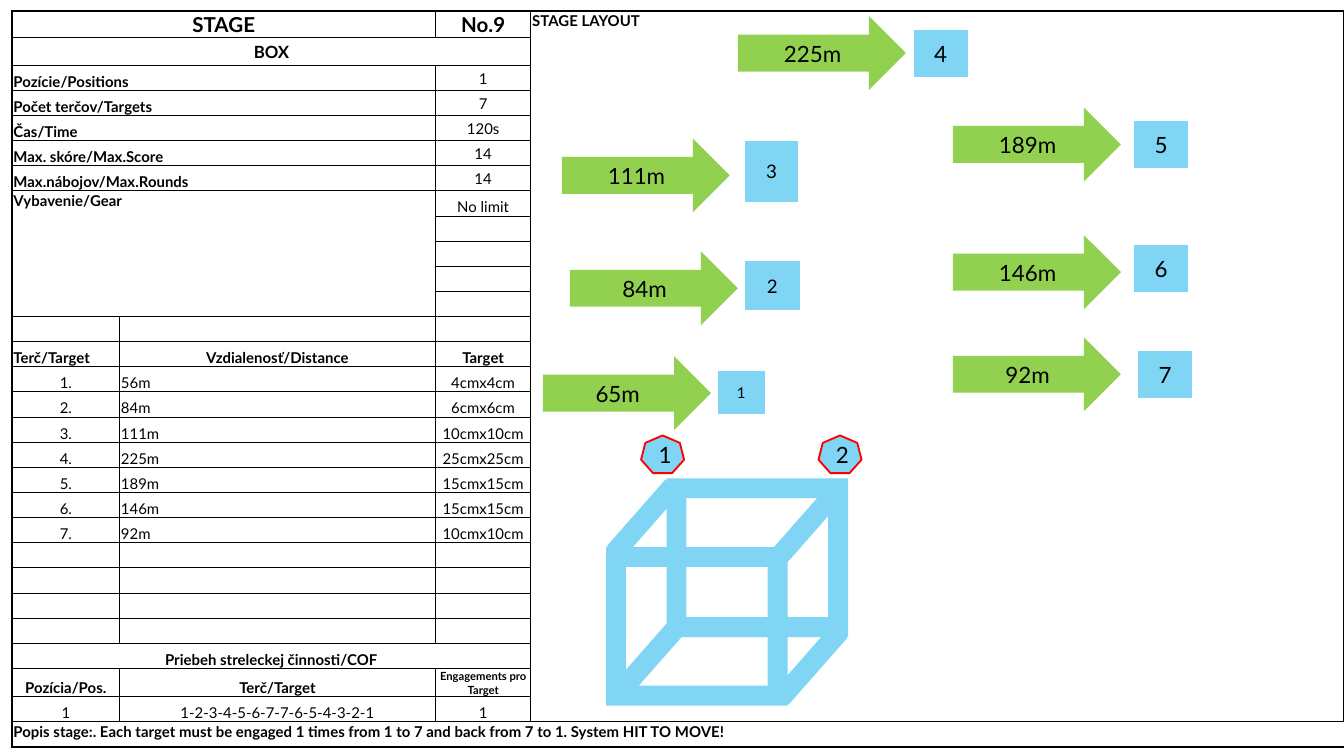
from dataclasses import dataclass
from typing import Optional

from lxml.etree import SubElement
from pptx import Presentation
from pptx.dml.color import RGBColor
from pptx.enum.shapes import MSO_SHAPE
from pptx.enum.text import MSO_ANCHOR, PP_ALIGN
from pptx.oxml.ns import qn
from pptx.util import Inches, Pt

BLACK = RGBColor(0x00, 0x00, 0x00)
BLUE = RGBColor(0x7F, 0xD5, 0xF3)
GREEN = RGBColor(0x92, 0xD0, 0x50)
RED = RGBColor(0xFF, 0x00, 0x00)
FONT = "Lato"
NO_STYLE = "{2D5ABB26-0587-4C30-8999-92F81FD0307C}"

LEFT, CENTER = PP_ALIGN.LEFT, PP_ALIGN.CENTER
TOP, MIDDLE, BOTTOM = MSO_ANCHOR.TOP, MSO_ANCHOR.MIDDLE, MSO_ANCHOR.BOTTOM

SLIDE_WIDTH = 10
SLIDE_HEIGHT = SLIDE_WIDTH * 9 / 16
TABLE_HEIGHT = 5.48
COLUMN_WIDTHS = [0.8, 2.35, 0.71, 6.05]
ROW_COUNT = 29
SPECIAL_ROWS = {0: 0.19, 1: 0.21, 26: 0.21}
ROW_HEIGHT = (TABLE_HEIGHT - sum(SPECIAL_ROWS.values())) / (ROW_COUNT - len(SPECIAL_ROWS))


@dataclass
class Block:
    row: int
    col: int
    text: str = ""
    rows: int = 1
    cols: int = 1
    size: float = 8
    bold: bool = False
    align: PP_ALIGN = CENTER
    anchor: MSO_ANCHOR = BOTTOM


@dataclass
class Item:
    kind: MSO_SHAPE
    left: float
    top: float
    width: float
    height: float
    text: str = ""
    size: float = 12
    fill: RGBColor = BLUE
    line: Optional[RGBColor] = None
    rotation: float = 0


def arrow(left: float, top: float, text: str) -> Item:
    return Item(MSO_SHAPE.RIGHT_ARROW, left, top, 1.25, 0.55, text, fill=GREEN)


def target(left: float, top: float, text: str, width: float = 0.4,
           height: float = 0.35, size: float = 12) -> Item:
    return Item(MSO_SHAPE.FLOWCHART_PROCESS, left, top, width, height, text, size)


def position(left: float, text: str) -> Item:
    return Item(MSO_SHAPE.HEPTAGON, left, 3.24, 0.32, 0.28, text, line=RED)


def box_face(left: float, top: float) -> Item:
    return Item(MSO_SHAPE.FRAME, left, top, 1.35, 1.18)


def box_edge(left: float, top: float) -> Item:
    return Item(MSO_SHAPE.FLOWCHART_PROCESS, left, top, 0.66, 0.15, rotation=311.3)


PARAMETERS = [
    ("Pozície/Positions", "1"),
    ("Počet terčov/Targets", "7"),
    ("Čas/Time", "120s"),
    ("Max. skóre/Max.Score", "14"),
    ("Max.nábojov/Max.Rounds", "14"),
]
TARGETS = [
    ("56m", "4cmx4cm"),
    ("84m", "6cmx6cm"),
    ("111m", "10cmx10cm"),
    ("225m", "25cmx25cm"),
    ("189m", "15cmx15cm"),
    ("146m", "15cmx15cm"),
    ("92m", "10cmx10cm"),
]
ITEMS = [
    position(4.77, "1"),
    target(5.34, 2.76, "1", 0.35, 0.32, 8),
    target(5.54, 1.94, "2", 0.41, 0.37, 10),
    target(5.54, 1.05, "3", 0.4, 0.45, 10),
    target(6.8, 0.22, "4"),
    arrow(4.04, 2.65, "65m"),
    target(8.44, 0.9, "5"),
    arrow(4.24, 1.87, "84m"),
    arrow(4.18, 1.03, "111m"),
    arrow(7.09, 1.75, "146m"),
    arrow(7.09, 0.8, "189m"),
    box_face(4.51, 4.07),
    box_face(4.96, 3.56),
    box_edge(5.7, 4.87),
    box_edge(4.46, 3.79),
    box_edge(4.47, 4.86),
    box_edge(5.64, 3.87),
    arrow(5.49, 0.12, "225m"),
    target(8.44, 1.82, "6"),
    arrow(7.09, 2.51, "92m"),
    target(8.47, 2.61, "7"),
    position(6.09, "2"),
]


def table_blocks() -> list[Block]:
    blocks = [
        Block(0, 0, "STAGE", cols=2, size=11, bold=True),
        Block(0, 2, "No.9", size=11, bold=True, anchor=MIDDLE),
        Block(0, 3, "STAGE LAYOUT", rows=28, bold=True, align=LEFT, anchor=TOP),
        Block(1, 0, "BOX", cols=3, size=9, bold=True, anchor=MIDDLE),
        Block(7, 0, "Vybavenie/Gear", rows=5, cols=2, bold=True, align=LEFT, anchor=TOP),
        Block(7, 2, "No limit"),
        Block(13, 0, "Terč/Target", bold=True, align=LEFT),
        Block(13, 1, "Vzdialenosť/Distance", bold=True),
        Block(13, 2, "Target", bold=True),
        Block(25, 0, "Priebeh streleckej činnosti/COF", cols=3, bold=True),
        Block(26, 0, "Pozícia/Pos.", bold=True),
        Block(26, 1, "Terč/Target", bold=True),
        Block(26, 2, "Engagements pro Target", size=6, bold=True),
        Block(27, 0, "1"),
        Block(27, 1, "1-2-3-4-5-6-7-7-6-5-4-3-2-1"),
        Block(27, 2, "1"),
        Block(28, 0, "Popis stage:. Each target must be engaged 1 times from 1 to 7 "
              "and back from 7 to 1. System HIT TO MOVE!",
              cols=4, bold=True, align=LEFT, anchor=TOP),
    ]
    for row, (label, value) in enumerate(PARAMETERS, 2):
        blocks += [Block(row, 0, label, cols=2, bold=True, align=LEFT),
                   Block(row, 2, value, anchor=MIDDLE)]
    for number, (distance, size) in enumerate(TARGETS, 1):
        row = 13 + number
        blocks += [Block(row, 0, f"{number}."), Block(row, 1, distance, align=LEFT),
                   Block(row, 2, size)]
    blocks += [Block(row, 2) for row in range(8, 12)]
    blocks += [Block(row, col) for row in (12, *range(21, 25)) for col in range(3)]
    return blocks


def format_text(tf, text: str, size: float, bold: bool, align: PP_ALIGN) -> None:
    tf.text = text
    p = tf.paragraphs[0]
    p.alignment = align
    for r in p.runs:
        r.font.name, r.font.size, r.font.bold = FONT, Pt(size), bold
        r.font.color.rgb = BLACK
    if not text:
        SubElement(p._p, qn("a:endParaRPr"), sz=str(int(size * 100)))


def add_border(cell, side: str, width: float) -> None:
    ln = SubElement(cell._tc.get_or_add_tcPr(), qn(f"a:ln{side}"), w=str(Pt(width)))
    SubElement(SubElement(ln, qn("a:solidFill")), qn("a:srgbClr"), val=str(BLACK))


def draw_block(table, block: Block) -> None:
    last_row = block.row + block.rows - 1
    last_col = block.col + block.cols - 1
    for row in range(block.row, last_row + 1):
        for col in range(block.col, last_col + 1):
            cell = table.cell(row, col)
            origin = (row, col) == (block.row, block.col)
            format_text(cell.text_frame, block.text if origin else "",
                        block.size if origin else 8, block.bold, block.align)
            cell.margin_left = cell.margin_right = cell.margin_top = Inches(0.01)
            cell.margin_bottom = 0
            cell.vertical_anchor = block.anchor
            for side, drawn, outer in (
                ("L", col == block.col, col == 0),
                ("R", col == last_col, col == len(COLUMN_WIDTHS) - 1),
                ("T", row == block.row, row == 0),
                ("B", row == last_row, row == ROW_COUNT - 1),
            ):
                if drawn:
                    add_border(cell, side, 1 if outer else 0.5)
            cell.fill.background()
    if block.rows * block.cols > 1:
        table.cell(block.row, block.col).merge(table.cell(last_row, last_col))


def draw_table(s) -> None:
    table = s.shapes.add_table(ROW_COUNT, len(COLUMN_WIDTHS), Inches(0.09), Inches(0.08),
                               Inches(sum(COLUMN_WIDTHS)), Inches(TABLE_HEIGHT)).table
    table.first_row = table.horz_banding = False
    table._tbl.tblPr.find(qn("a:tableStyleId")).text = NO_STYLE
    for column, width in zip(table.columns, COLUMN_WIDTHS):
        column.width = Inches(width)
    for i, row in enumerate(table.rows):
        row.height = Inches(SPECIAL_ROWS.get(i, ROW_HEIGHT))
    for block in table_blocks():
        draw_block(table, block)


def draw_item(s, item: Item) -> None:
    sp = s.shapes.add_shape(item.kind, Inches(item.left), Inches(item.top),
                            Inches(item.width), Inches(item.height))
    sp.shadow.inherit = False
    sp.rotation = item.rotation
    sp.fill.solid()
    sp.fill.fore_color.rgb = item.fill
    if item.line is None:
        sp.line.fill.background()
    else:
        sp.line.color.rgb = item.line
        sp.line.width = Pt(1)
    if item.text:
        tf = sp.text_frame
        tf.margin_left = tf.margin_right = tf.margin_top = tf.margin_bottom = Inches(0.1)
        tf.vertical_anchor = MIDDLE
        format_text(tf, item.text, item.size, False, CENTER)


def main() -> None:
    prs = Presentation()
    prs.slide_width, prs.slide_height = Inches(SLIDE_WIDTH), Inches(SLIDE_HEIGHT)
    s = prs.slides.add_slide(prs.slide_layouts[6])
    draw_table(s)
    for item in ITEMS:
        draw_item(s, item)
    prs.save("out.pptx")


if __name__ == "__main__":
    main()
